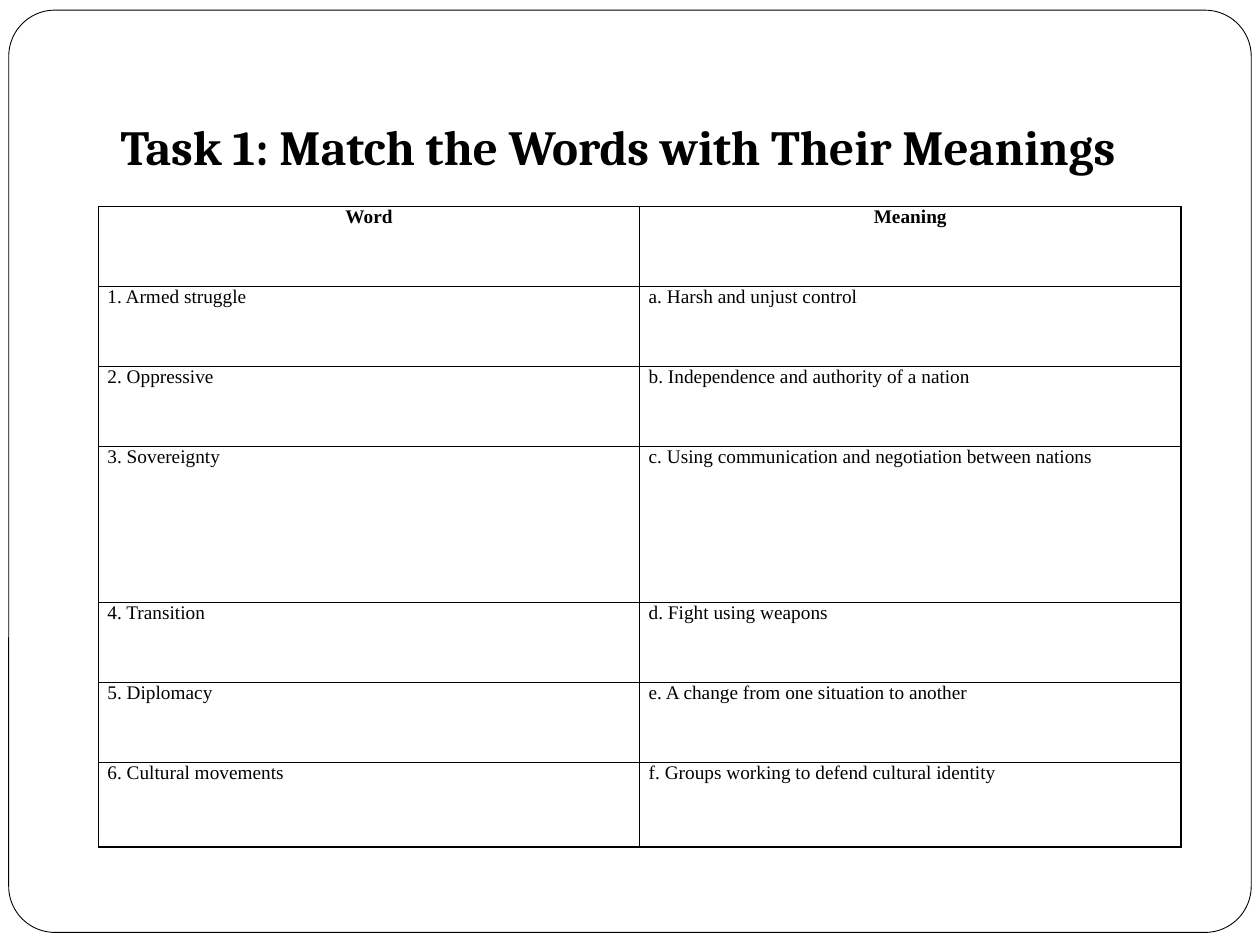
"""Build a word-matching task slide with a two-column table."""
from lxml import etree
from pptx import Presentation
from pptx.dml.color import RGBColor
from pptx.enum import shapes, text
from pptx.oxml import ns
from pptx.util import Pt

TITLE = "Task 1: Match the Words with Their Meanings"
ROWS = [
    ("Word", "Meaning", 45.7),
    ("1. Armed struggle", "a. Harsh and unjust control", 45.7),
    ("2. Oppressive", "b. Independence and authority of a nation", 45.7),
    ("3. Sovereignty", "c. Using communication and negotiation between nations", 89.2),
    ("4. Transition", "d. Fight using weapons", 45.7),
    ("5. Diplomacy", "e. A change from one situation to another", 45.7),
    ("6. Cultural movements", "f. Groups working to defend cultural identity", 48.3),
]
BLACK, WHITE = "000000", "FFFFFF"
HEAD = {"name": "Cambria", "size": Pt(28), "bold": True}
BODY = {"name": "Times New Roman", "size": Pt(11), "bold": False}
FRAME = (5, 5.8, 710, 527)
GRID = (56.2, 118.1, 618.6, sum(row[-1] for row in ROWS))
BANNER = (61.9, 56.2, 635.8, 65.5)


def color(code):
    return RGBColor.from_string(code)


def paint(item, code):
    item.fill.solid()
    item.fill.fore_color.rgb = color(code)


def apply(item, props):
    for key, value in props.items():
        setattr(item, key, value)


def write(para, words, props):
    para.text = words
    apply(para.font, props)
    para.font.color.rgb = color(BLACK)


def border(cell):
    props = cell._tc.get_or_add_tcPr()
    for spot, side in enumerate(("lnL", "lnR", "lnT", "lnB")):
        line = etree.Element(ns.qn(f"a:{side}"), w=str(Pt(1)))
        fill = etree.SubElement(line, ns.qn("a:solidFill"))
        etree.SubElement(fill, ns.qn("a:srgbClr"), val=BLACK)
        props.insert(spot, line)


def add_frame(slide):
    frame = slide.shapes.add_shape(shapes.MSO_SHAPE.ROUNDED_RECTANGLE, *map(Pt, FRAME))
    frame.adjustments[0] = 0.05
    frame.shadow.inherit = False
    paint(frame, WHITE)
    frame.line.color.rgb = color(BLACK)
    frame.line.width = Pt(0.5)


def add_grid(slide):
    table = slide.shapes.add_table(len(ROWS), 2, *map(Pt, GRID)).table
    apply(table, {"first_row": False, "horz_banding": False})
    for r, (*words, height) in enumerate(ROWS):
        table.rows[r].height = Pt(height)
        for c, word in enumerate(words):
            cell = table.cell(r, c)
            apply(cell, {"margin_left": Pt(5.2), "margin_right": Pt(5.2),
                         "margin_top": 0, "margin_bottom": 0})
            paint(cell, WHITE)
            border(cell)
            para = cell.text_frame.paragraphs[0]
            write(para, word, {**BODY, "bold": r == 0})
            para.alignment = text.PP_ALIGN.LEFT if r else text.PP_ALIGN.CENTER


def add_title(slide):
    frame = slide.shapes.add_textbox(*map(Pt, BANNER)).text_frame
    apply(frame, {"word_wrap": True, "vertical_anchor": text.MSO_ANCHOR.MIDDLE,
                  "margin_left": Pt(7.2), "margin_right": Pt(7.2),
                  "margin_top": Pt(10), "margin_bottom": Pt(21)})
    write(frame.paragraphs[0], TITLE, HEAD)


def main():
    deck = Presentation()
    apply(deck, {"slide_width": Pt(720), "slide_height": Pt(540)})
    slide = deck.slides.add_slide(deck.slide_layouts[6])
    paint(slide.background, WHITE)
    add_frame(slide)
    add_grid(slide)
    add_title(slide)
    deck.save("out.pptx")


if __name__ == "__main__":
    main()
